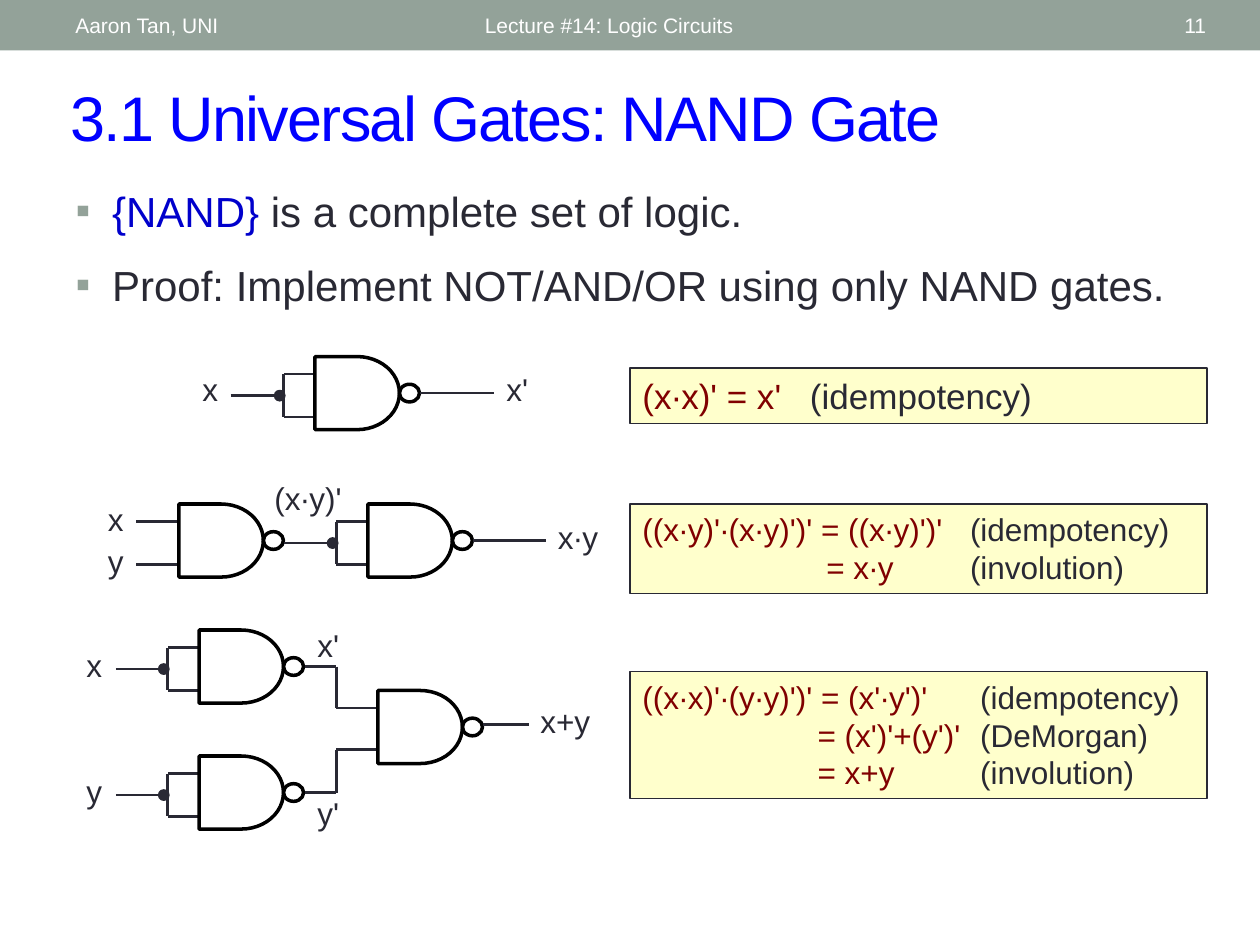
import pptx
import pptx.dml.color
import pptx.enum.shapes
import pptx.enum.text
import pptx.util
from lxml import etree
from pptx.oxml.ns import qn

Inches = pptx.util.Inches
Pt = pptx.util.Pt
SHAPE = pptx.enum.shapes.MSO_SHAPE
ALIGN = pptx.enum.text.PP_ALIGN
MIDDLE = pptx.enum.text.MSO_ANCHOR.MIDDLE
TOP = pptx.enum.text.MSO_ANCHOR.TOP

COLORS = {
    "band": "93A299",
    "title": "0000FF",
    "term": "0000CC",
    "ink": "292934",
    "formula": "800000",
    "note": "FFFFCC",
    "outline": "000000",
    "white": "FFFFFF",
}


def rgb(name):
    return pptx.dml.color.RGBColor.from_string(COLORS[name])


def inches(*lengths):
    return [Inches(length) for length in lengths]


def write(shape, lines, size=18, color="ink", align=ALIGN.LEFT, anchor=TOP,
          before=(), tabs=(), bullet=None, spacing=None):
    """Fill a shape with lines; each line is a string or a list of (text, color)."""
    frame = shape.text_frame
    frame.word_wrap = True
    frame.vertical_anchor = anchor
    for i, line in enumerate(lines):
        paragraph = frame.paragraphs[0] if i == 0 else frame.add_paragraph()
        paragraph.alignment = align
        if before:
            paragraph.space_before = Pt(before[i])
        if bullet:
            add_bullet(paragraph, bullet)
        if tabs:
            add_tabs(paragraph, tabs)
        for text, run_color in [(line, color)] if isinstance(line, str) else line:
            run = paragraph.add_run()
            run.text = text
            run.font.name = "Arial"
            run.font.size = Pt(size)
            run.font.color.rgb = rgb(run_color)
            if spacing:
                run.font._element.set("spc", str(spacing * 100))


def add_bullet(paragraph, character):
    properties = paragraph._p.get_or_add_pPr()
    properties.set("marL", str(Inches(0.29)))
    properties.set("indent", str(Inches(-0.29)))
    bullet_color = etree.SubElement(properties, qn("a:buClr"))
    etree.SubElement(bullet_color, qn("a:srgbClr"), val=COLORS["band"])
    etree.SubElement(properties, qn("a:buFont"), typeface="Arial")
    etree.SubElement(properties, qn("a:buChar"), char=character)


def add_tabs(paragraph, positions):
    tab_list = etree.SubElement(paragraph._p.get_or_add_pPr(), qn("a:tabLst"))
    for position in positions:
        etree.SubElement(tab_list, qn("a:tab"), pos=str(Inches(position)), algn="l")


def draw(shapes, kind, at, fill=None, line=None, width=1):
    shape = shapes.add_shape(kind, *inches(*at))
    shape.shadow.inherit = False
    if fill:
        shape.fill.solid()
        shape.fill.fore_color.rgb = rgb(fill)
    else:
        shape.fill.background()
    if line:
        shape.line.color.rgb = rgb(line)
        shape.line.width = Pt(width)
    else:
        shape.line.fill.background()
    return shape


def wire(shapes, *points):
    """Join the points by straight segments."""
    for start, end in zip(points, points[1:]):
        segment = shapes.add_connector(
            pptx.enum.shapes.MSO_CONNECTOR.STRAIGHT, *inches(*start, *end))
        segment.line.color.rgb = rgb("ink")
        segment.line.width = Pt(1.5)
        etree.SubElement(segment._element.spPr, qn("a:effectLst"))


def label(shapes, text, x, y, width=0.33, height=0.4, **style):
    write(shapes.add_textbox(*inches(x, y, width, height)), [text], **style)


def input_label(shapes, text, x, y):
    label(shapes, text, x, y, align=ALIGN.RIGHT)


def nand(shapes, x, y):
    draw(shapes, SHAPE.FLOWCHART_DELAY, (x, y, 0.67, 0.58), line="outline", width=2)
    draw(shapes, SHAPE.OVAL, (x + 0.67, y + 0.22, 0.16, 0.14), line="outline", width=2)


def tied_nand(shapes, x, y, source):
    """NAND gate whose two inputs share one wire coming from x = source."""
    fork = x - 0.25
    wire(shapes, (source, y + 0.31), (fork, y + 0.31))
    wire(shapes, (x, y + 0.14), (fork, y + 0.14), (fork, y + 0.48), (x, y + 0.48))
    draw(shapes, SHAPE.OVAL, (fork - 0.07, y + 0.27, 0.08, 0.08), fill="ink", line="ink")
    nand(shapes, x, y)


def not_circuit(shapes):
    input_label(shapes, "x", 1.5, 2.89)
    tied_nand(shapes, 2.5, 2.83, source=1.83)
    wire(shapes, (3.33, 3.12), (3.92, 3.12))
    label(shapes, "x'", 3.92, 2.89, 0.5)


def and_circuit(shapes):
    for text, label_y, wire_y in (("x", 3.92, 4.14), ("y", 4.25, 4.48)):
        input_label(shapes, text, 0.75, label_y)
        wire(shapes, (1.08, wire_y), (1.42, wire_y))
    nand(shapes, 1.42, 4)
    label(shapes, "(x∙y)'", 2.08, 3.75, 0.75)
    tied_nand(shapes, 2.92, 4, source=2.25)
    wire(shapes, (3.75, 4.29), (4.33, 4.29))
    label(shapes, "x∙y", 4.33, 4.06, 0.58)


def or_circuit(shapes):
    branches = (("x", 5, 4.92, 5.62), ("y", 6, 6.25, 5.95))
    for text, y, inverse_y, join_y in branches:
        input_label(shapes, text, 0.58, y + 0.08)
        tied_nand(shapes, 1.58, y, source=0.92)
        wire(shapes, (2.42, y + 0.29), (2.67, y + 0.29), (2.67, join_y), (3, join_y))
        label(shapes, text + "'", 2.42, inverse_y, 0.42)
    nand(shapes, 3, 5.48)
    wire(shapes, (3.83, 5.75), (4.2, 5.75))
    label(shapes, "x+y", 4.19, 5.52, 0.67)


def proof(shapes, y, height, steps, tabs, size=18):
    """Note with one (formula, law) pair per line, set on tab stops."""
    note = draw(shapes, SHAPE.RECTANGLE, (5, y, 4.58, height),
                fill="note", line="ink", width=0.75)
    lines = [[(formula, "formula"), ("\t" + law, "ink")] for formula, law in steps]
    write(note, lines, size=size, tabs=tabs)


def header(shapes):
    draw(shapes, SHAPE.RECTANGLE, (0, 0, 10, 0.4), fill="band")
    for text, x, width, align in (
        ("Aaron Tan, UNI", 0.5, 3.17, ALIGN.LEFT),
        ("Lecture #14: Logic Circuits", 3.75, 4.5, ALIGN.LEFT),
        ("11", 8.72, 0.95, ALIGN.RIGHT),
    ):
        label(shapes, text, x, 0.02, width, 0.36, size=12, color="white",
              align=align, anchor=MIDDLE)


def place(placeholder, *at):
    placeholder.left, placeholder.top, placeholder.width, placeholder.height = inches(*at)
    return placeholder


def main():
    deck = pptx.Presentation()
    deck.slide_width, deck.slide_height = inches(10, 7.5)
    slide = deck.slides.add_slide(deck.slide_layouts[1])
    shapes = slide.shapes

    header(shapes)
    write(place(shapes.title, 0.46, 0.57, 9.07, 0.7), ["3.1 Universal Gates: NAND Gate"],
          size=36, color="title", anchor=MIDDLE, spacing=-1)
    write(place(slide.placeholders[1], 0.5, 1.42, 9, 1.33),
          [[("{NAND} ", "term"), ("is a complete set of logic.", "ink")],
           "Proof: Implement NOT/AND/OR using only NAND gates."],
          size=24, before=(5, 13.5), bullet="▪")

    for circuit in (not_circuit, and_circuit, or_circuit):
        circuit(shapes.add_group_shape().shapes)

    proof(shapes, 2.92, 0.44, [("(x∙x)' = x'", "(idempotency)")], tabs=(1.33,), size=20)
    proof(shapes, 4, 0.71, [
        ("((x∙y)'∙(x∙y)')' = ((x∙y)')'", "(idempotency)"),
        ("\t= x∙y", "(involution)"),
    ], tabs=(1.46, 2.6))
    proof(shapes, 5.33, 1.01, [
        ("((x∙x)'∙(y∙y)')' = (x'∙y')'", "(idempotency)"),
        ("\t= (x')'+(y')'", "(DeMorgan)"),
        ("\t= x+y", "(involution)"),
    ], tabs=(1.39, 2.68))

    deck.save("out.pptx")


if __name__ == "__main__":
    main()
